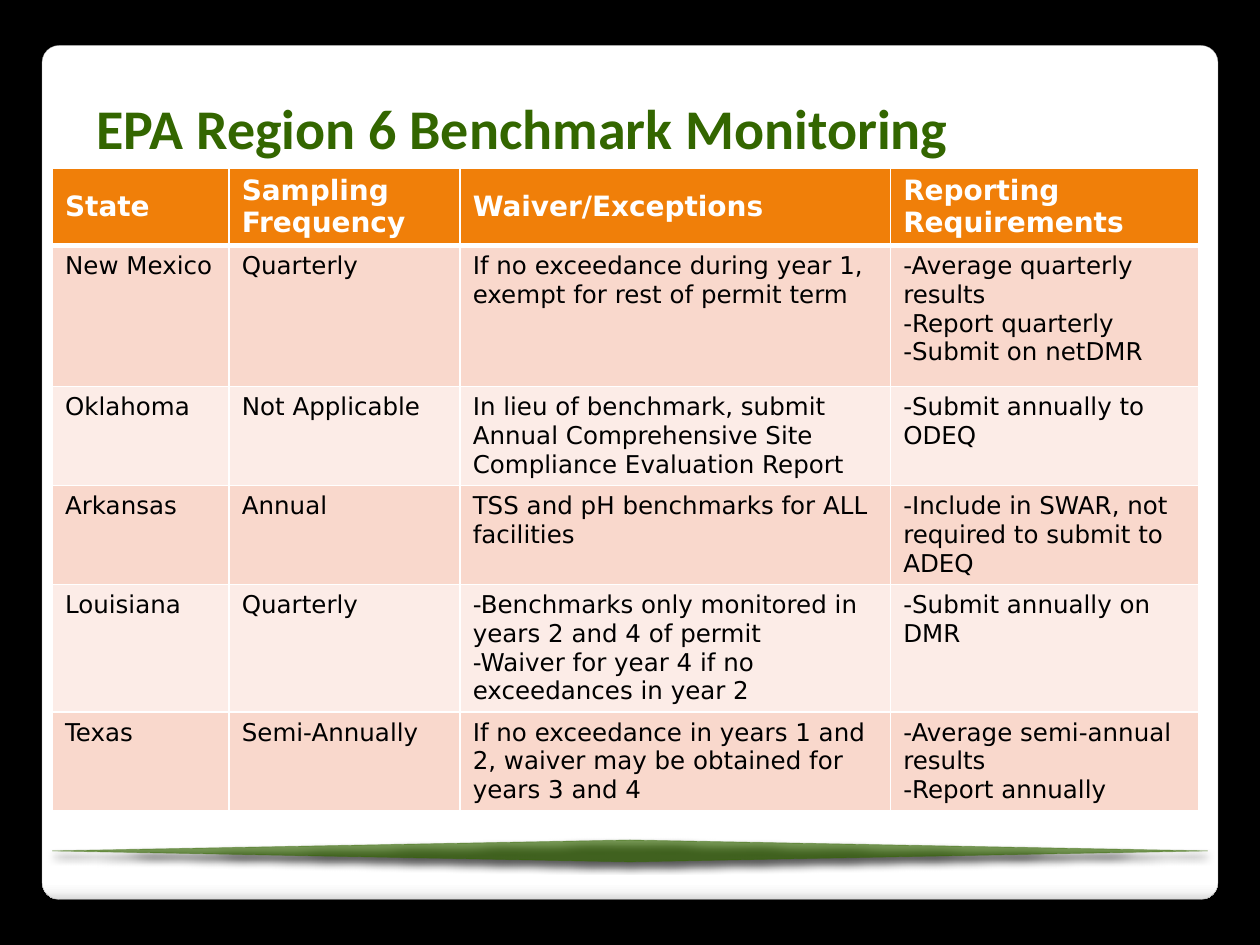
"""Build a one-slide table of benchmark monitoring rules by state."""
from lxml.etree import SubElement as Sub
from pptx import Presentation as Deck
from pptx.dml.color import RGBColor as Rgb
from pptx.enum.shapes import MSO_SHAPE as Kind
from pptx.enum.text import MSO_ANCHOR as Anchor, PP_ALIGN as Align
from pptx.oxml.ns import qn
from pptx.util import Pt

TITLE = "EPA Region 6 Benchmark Monitoring"
ROWS = [
    ("State", "Sampling Frequency", "Waiver/Exceptions", "Reporting Requirements"),
    ("New Mexico", "Quarterly",
     "If no exceedance during year 1, exempt for rest of permit term",
     ["-Average quarterly results", "-Report quarterly", "-Submit on netDMR"]),
    ("Oklahoma", "Not Applicable",
     "In lieu of benchmark, submit Annual Comprehensive Site Compliance Evaluation Report",
     "-Submit annually to ODEQ"),
    ("Arkansas", "Annual", "TSS and pH benchmarks for ALL facilities",
     "-Include in SWAR, not required to submit to ADEQ"),
    ("Louisiana", "Quarterly",
     ["-Benchmarks only monitored in years 2 and 4 of permit",
      "-Waiver for year 4 if no exceedances in year 2"],
     "-Submit annually on DMR"),
    ("Texas", "Semi-Annually",
     "If no exceedance in years 1 and 2, waiver may be obtained for years 3 and 4",
     ["-Average semi-annual results", "-Report annually"]),
]
WIDTHS = [101, 132, 246, 176]
HEIGHTS = [44, 80.6, 56.5, 56.5, 72.5, 56.5]
CARD = (24, 26, 672, 488)
GEM = (30, 480, 660, 12.5)
HEAD = (48, 50, 630, 46)
GRID = (30, 96)


class Theme:
    """Colours, fonts and type sizes."""
    back, white, ink = "000000", "FFFFFF", "000000"
    green, orange, edge = "336600", "F07F09", "A4A4A4"
    bands = ["FCECE7", "F9D8CC"]
    fade = [(0, "FFFFFF"), (98, "FFFFFF"), (99, "F7F7F7"), (100, "DADADA")]
    head, body = "Calibri", "DejaVu Sans"
    big, mid, small = 32, 16, 14


def paint(fill, tint):
    fill.solid()
    fill.fore_color.rgb = Rgb.from_string(tint)


def write(para, text, face, size, tint, bold):
    run = para.add_run()
    run.text = text
    font = run.font
    font.name, font.size, font.bold = face, Pt(size), bold
    font.color.rgb = Rgb.from_string(tint)


def tint_node(node, tint, alpha=100):
    clr = Sub(node, qn("a:srgbClr"), val=tint)
    if alpha < 100:
        Sub(clr, qn("a:alpha"), val=str(alpha * 1000))


def add_form(shapes, kind, box, line, width):
    form = shapes.add_shape(kind, *map(Pt, box))
    form.shadow.inherit = False
    paint(form.line.fill, line)
    form.line.width = Pt(width)
    return form


def add_card(shapes):
    card = add_form(shapes, Kind.ROUNDED_RECTANGLE, CARD, Theme.edge, 0.16)
    card.adjustments[0] = 0.02
    card.fill.gradient()
    card.fill.gradient_angle = 270
    stops = card._element.spPr.find(".//" + qn("a:gsLst"))
    for stop in list(stops):
        stops.remove(stop)
    for spot, tint in Theme.fade:
        tint_node(Sub(stops, qn("a:gs"), pos=str(spot * 1000)), tint)


def add_gem(shapes):
    gem = add_form(shapes, Kind.FLOWCHART_DECISION, GEM, Theme.green, 0.5)
    paint(gem.fill, Theme.green)
    props = gem._element.spPr
    for clr, alpha in zip(props.iter(qn("a:srgbClr")), (65, 36)):
        Sub(clr, qn("a:alpha"), val=str(alpha * 1000))
    glow = Sub(props.find(qn("a:effectLst")), qn("a:outerShdw"), blurRad=str(Pt(4)),
               dist=str(Pt(3)), dir="5400000", rotWithShape="0")
    tint_node(glow, Theme.ink, 65)


def set_title(shapes):
    title = shapes.title
    shapes._spTree.append(title._element)
    title.left, title.top, title.width, title.height = map(Pt, HEAD)
    frame = title.text_frame
    frame.word_wrap, frame.vertical_anchor = True, Anchor.TOP
    para = frame.paragraphs[0]
    para.alignment = Align.LEFT
    write(para, TITLE, Theme.head, Theme.big, Theme.green, True)


def fill_cell(cell, text, row):
    top = row == 0
    props = cell._tc.get_or_add_tcPr()
    for side in "LRTB":
        thick = 3 if (row, side) in ((0, "B"), (1, "T")) else 1
        line = Sub(props, qn("a:ln" + side), w=str(Pt(thick)))
        tint_node(Sub(line, qn("a:solidFill")), Theme.white)
    paint(cell.fill, Theme.orange if top else Theme.bands[row % 2])
    cell.vertical_anchor = Anchor.MIDDLE if top else Anchor.TOP
    size, tint = (Theme.mid, Theme.white) if top else (Theme.small, Theme.ink)
    frame = cell.text_frame
    for i, part in enumerate([text] if isinstance(text, str) else text):
        para = frame.add_paragraph() if i else frame.paragraphs[0]
        write(para, part, Theme.body, size, tint, top)


def add_grid(shapes):
    size = (sum(WIDTHS), sum(HEIGHTS))
    table = shapes.add_table(len(ROWS), len(WIDTHS), *map(Pt, GRID + size)).table
    table.horz_banding = False
    for col, width in zip(table.columns, WIDTHS):
        col.width = Pt(width)
    for row, height in zip(table.rows, HEIGHTS):
        row.height = Pt(height)
    for r, row in enumerate(ROWS):
        for c, text in enumerate(row):
            fill_cell(table.cell(r, c), text, r)


def main():
    deck = Deck()
    deck.slide_width, deck.slide_height = Pt(720), Pt(540)
    slide = deck.slides.add_slide(deck.slide_layouts[5])
    paint(slide.background.fill, Theme.back)
    for step in (add_card, add_gem, set_title, add_grid):
        step(slide.shapes)
    deck.save("out.pptx")


if __name__ == "__main__":
    main()
